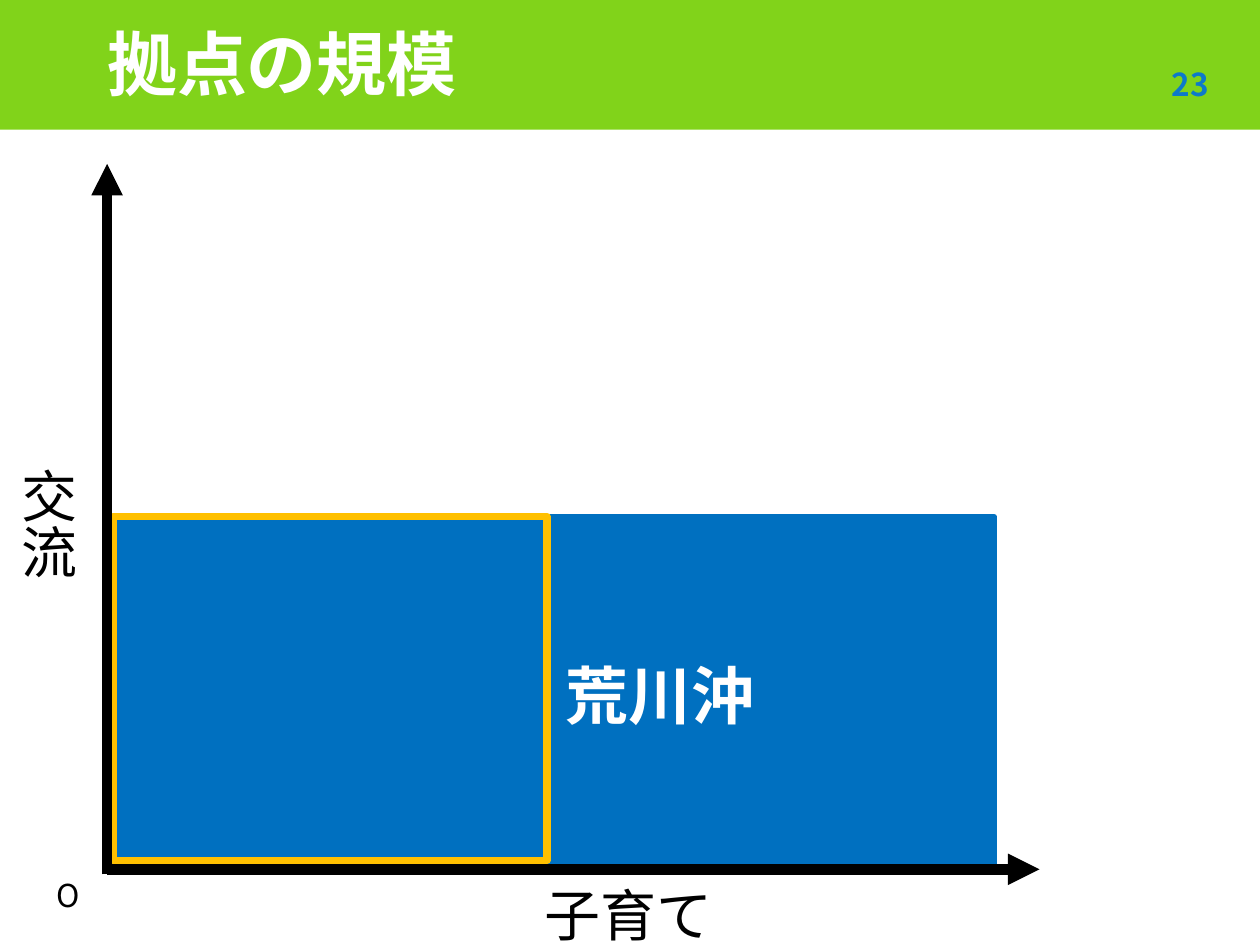
from lxml import etree
from pptx import Presentation
from pptx.dml.color import RGBColor
from pptx.enum.shapes import MSO_CONNECTOR, MSO_SHAPE
from pptx.enum.text import MSO_ANCHOR, MSO_AUTO_SIZE, PP_ALIGN
from pptx.oxml.ns import qn
from pptx.util import Inches, Pt

FONT = "Noto Sans CJK JP"
COLORS = {
    "band": "81D31A",
    "area": "0070C0",
    "outline": "FFC000",
    "ink": "000000",
    "white": "FFFFFF",
    "number": "0D79CA",
}


def rgb(name):
    return RGBColor.from_string(COLORS[name])


def format_text(frame, text, size, color, bold=False):
    frame.text = text
    para = frame.paragraphs[0]
    para.alignment = PP_ALIGN.LEFT
    para.font.name = FONT
    para.font.size = Pt(size)
    para.font.bold = bold
    para.font.color.rgb = rgb(color)
    properties = para._p.pPr.find(qn("a:defRPr"))
    etree.SubElement(properties, qn("a:ea"), typeface=FONT)
    return para


def add_rectangle(page, left, top, width, height, fill=None, line=None, weight=0):
    shape = page.shapes.add_shape(
        MSO_SHAPE.RECTANGLE, Inches(left), Inches(top), Inches(width), Inches(height))
    shape.shadow.inherit = False
    if fill:
        shape.fill.solid()
        shape.fill.fore_color.rgb = rgb(fill)
    else:
        shape.fill.background()
    if line:
        shape.line.color.rgb = rgb(line)
        shape.line.width = Pt(weight)
    else:
        shape.line.fill.background()
    return shape


def add_label(page, left, top, width, height, text, size, color="ink",
              bold=False, vertical=False):
    box = page.shapes.add_textbox(
        Inches(left), Inches(top), Inches(width), Inches(height))
    frame = box.text_frame
    frame.word_wrap = False
    frame.auto_size = MSO_AUTO_SIZE.SHAPE_TO_FIT_TEXT
    if vertical:
        frame._txBody.bodyPr.set("vert", "eaVert")
    format_text(frame, text, size, color, bold)
    return box


def add_axis(page, start, end):
    axis = page.shapes.add_connector(
        MSO_CONNECTOR.STRAIGHT, *(Inches(value) for value in (*start, *end)))
    axis.line.color.rgb = rgb("ink")
    axis.line.width = Pt(6)
    etree.SubElement(axis.line._get_or_add_ln(), qn("a:tailEnd"), type="triangle")
    etree.SubElement(axis._element.spPr, qn("a:effectLst"))


def add_header(page, left, top, width, height):
    band = add_rectangle(page, left, top, width, height, fill="band")
    title = page.shapes.title
    band._element.addnext(title._element)
    title.left, title.top = Inches(left + 0.75), Inches(top + 0.23)
    title.width, title.height = Inches(width - 1.5), Inches(0.7)
    title.text_frame.vertical_anchor = MSO_ANCHOR.MIDDLE
    para = format_text(title.text_frame, "拠点の規模", 40, "white", True)
    para.line_spacing = 0.85

    number = add_label(page, left + width - 0.75, top + 0.48, 0.49, 0.43,
                       "23", 18, "number", True)
    frame = number.text_frame
    frame.auto_size = MSO_AUTO_SIZE.NONE
    frame.word_wrap = True
    frame.vertical_anchor = MSO_ANCHOR.MIDDLE
    frame.margin_left = frame.margin_top = frame.margin_bottom = Inches(0.05)


def add_scale_diagram(page, left, top, width, height):
    base = top + height
    area_left, area_top = left + 0.05, base - 2.8
    add_rectangle(page, area_left, area_top, 6.99, 2.8, "area", "area", 3)
    add_rectangle(page, area_left, area_top, 3.44, 2.73,
                  line="outline", weight=4.5)
    add_axis(page, (left, base + 0.04), (left, top))
    add_axis(page, (left, base), (left + width, base))
    add_label(page, left + 3.37, base + 0.04, 1.55, 0.64, "子育て", 32)
    add_label(page, left - 0.9, base - 3.28, 0.74, 1, "交流", 32, vertical=True)
    add_label(page, left - 0.5, base, 0.39, 0.4, "O", 18)
    add_label(page, left + 3.54, base - 1.74, 1.72, 0.71,
              "荒川沖", 36, "white", True)


def main():
    deck = Presentation()
    deck.slide_width, deck.slide_height = Inches(10), Inches(7.5)
    page = deck.slides.add_slide(deck.slide_layouts[5])
    add_header(page, 0, -0.03, 10, 1.06)
    add_scale_diagram(page, 0.85, 1.3, 7.4, 5.6)
    deck.save("out.pptx")


if __name__ == "__main__":
    main()
